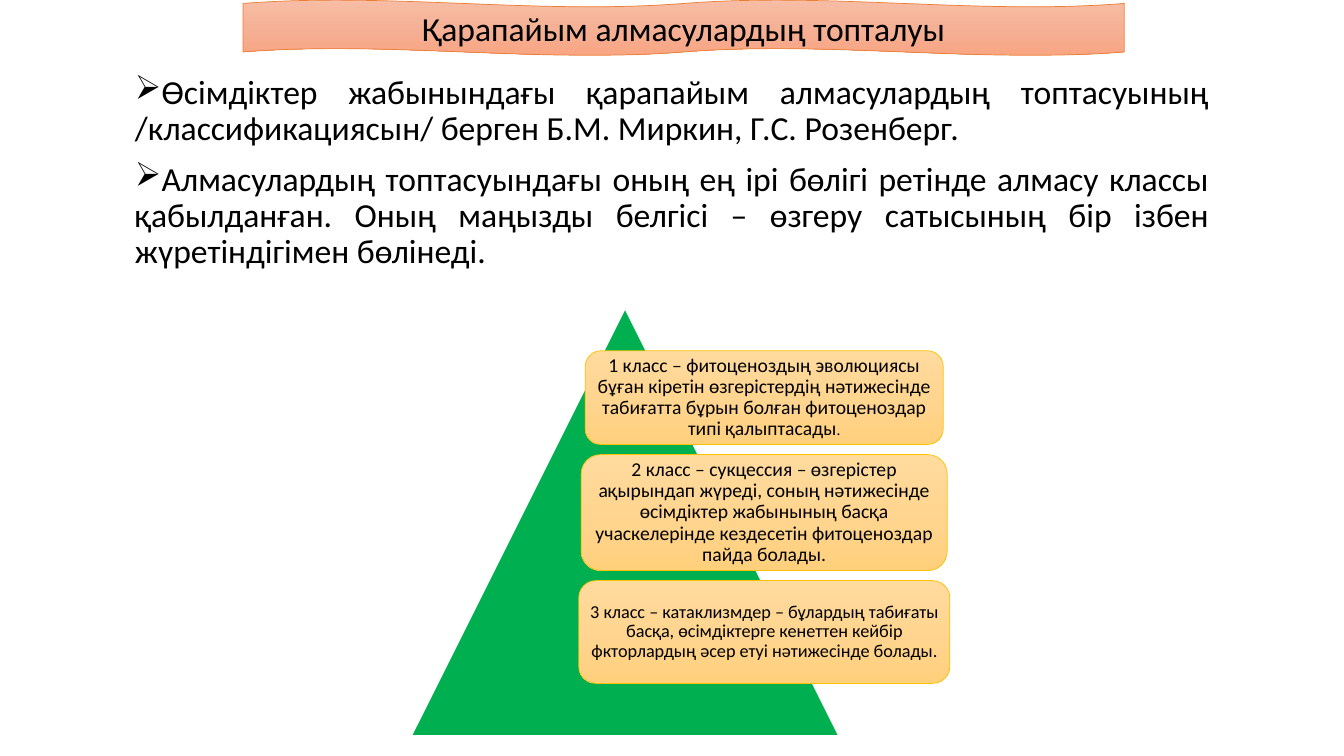
"""Builds a slide on the classes of simple vegetation changes."""
import copy

import pptx
import pptx.dml.color
import pptx.enum.shapes
import pptx.enum.text
import pptx.oxml.ns
import pptx.oxml.xmlchemy
import pptx.util
from pptx.util import Inches

RGBColor = pptx.dml.color.RGBColor
SHAPE = pptx.enum.shapes.MSO_SHAPE
ALIGN = pptx.enum.text.PP_ALIGN
ANCHOR = pptx.enum.text.MSO_ANCHOR
Pt = pptx.util.Pt

FONT = "Calibri"
BLACK = RGBColor(0x00, 0x00, 0x00)
WHITE = RGBColor(0xFF, 0xFF, 0xFF)
GREEN = RGBColor(0x00, 0xB0, 0x50)
ORANGE = RGBColor(0xED, 0x7D, 0x31)
GOLD = RGBColor(0xFF, 0xC0, 0x00)
PEACH = [RGBColor(0xF7, 0xBD, 0xA5), RGBColor(0xF5, 0xB1, 0x96), RGBColor(0xF8, 0xA5, 0x82)]
SAND = [RGBColor(0xFF, 0xDB, 0x9E), RGBColor(0xFF, 0xD5, 0x90), RGBColor(0xFF, 0xD0, 0x7C)]

TITLE = "Қарапайым алмасулардың топталуы"
INTRO = [
    "Өсімдіктер жабынындағы қарапайым алмасулардың топтасуының /классификациясын/ "
    "берген Б.М. Миркин, Г.С. Розенберг.",
    "Алмасулардың топтасуындағы оның ең ірі бөлігі ретінде алмасу классы қабылданған. "
    "Оның маңызды белгісі – өзгеру сатысының бір ізбен жүретіндігімен бөлінеді.",
]
CLASSES = [
    {"width": 3.55, "height": 0.93, "inset": 0.06, "runs": [
        ("1 класс – фитоценоздың эволюциясы бұған кіретін өзгерістердің нәтижесінде "
         "табиғатта бұрын болған фитоценоздар типі қалыптасады", 14), (".", 11)]},
    {"width": 3.63, "height": 1.15, "inset": 0.06, "runs": [
        ("2 класс – сукцессия – өзгерістер ақырындап жүреді, соның нәтижесінде өсімдіктер "
         "жабынының басқа учаскелерінде кездесетін фитоценоздар пайда болады.", 14)]},
    {"width": 3.68, "height": 1.02, "inset": 0.05, "runs": [
        ("3 класс – катаклизмдер – бұлардың табиғаты басқа, өсімдіктерге кенеттен кейбір "
         "фкторлардың әсер етуі нәтижесінде болады.", 13)]},
]
CLASS_CENTER = 7.58
CLASS_TOP = 3.48
CLASS_GAP = 0.1


def add_outlined(slide, preset, box, line_color, line_width):
    shape = slide.shapes.add_shape(preset, *map(Inches, box))
    shape.shadow.inherit = False
    shape.line.color.rgb = line_color
    shape.line.width = Pt(line_width)
    return shape


def fill_gradient(shape, colors):
    shape.fill.gradient()
    shape.fill.gradient_angle = 270
    stop_list = shape._element.spPr.find(".//" + pptx.oxml.ns.qn("a:gsLst"))
    stop_list.insert(1, copy.deepcopy(stop_list[0]))
    for stop, color, position in zip(shape.fill.gradient_stops, colors, (0, 0.5, 1)):
        stop.color.rgb = color
        stop.position = position


def write(paragraph, runs, align):
    paragraph.alignment = align
    for text, size in runs:
        run = paragraph.add_run()
        run.text = text
        run.font.name = FONT
        run.font.size = Pt(size)
        run.font.color.rgb = BLACK


def add_bullet(paragraph):
    properties = paragraph._p.get_or_add_pPr()
    properties.set("marL", "0")
    properties.set("indent", "0")
    bullet = properties.makeelement(pptx.oxml.ns.qn("a:buChar"), {"char": "➢"})
    properties.append(bullet)


def main():
    deck = pptx.Presentation()
    deck.slide_width, deck.slide_height = Inches(13.33), Inches(7.5)
    slide = deck.slides.add_slide(deck.slide_layouts[6])

    banner = add_outlined(slide, SHAPE.DOUBLE_WAVE, (2.41, 0, 8.74, 0.55), ORANGE, 0.5)
    fill_gradient(banner, PEACH)
    banner.text_frame.vertical_anchor = ANCHOR.MIDDLE
    write(banner.text_frame.paragraphs[0], [(TITLE, 24)], ALIGN.CENTER)

    intro = slide.shapes.add_textbox(*map(Inches, (1.24, 0.7, 10.85, 2.6))).text_frame
    intro.word_wrap = True
    for index, text in enumerate(INTRO):
        paragraph = intro.add_paragraph() if index else intro.paragraphs[0]
        write(paragraph, [(text, 24)], ALIGN.JUSTIFY)
        paragraph.line_spacing = 0.9
        paragraph.space_before = Pt(10)
        add_bullet(paragraph)

    pyramid = add_outlined(slide, SHAPE.ISOSCELES_TRIANGLE, (4.08, 3.06, 4.24, 4.24), WHITE, 1)
    pyramid.fill.solid()
    pyramid.fill.fore_color.rgb = GREEN

    top = CLASS_TOP
    for item in CLASSES:
        box = (CLASS_CENTER - item["width"] / 2, top, item["width"], item["height"])
        card = add_outlined(slide, SHAPE.ROUNDED_RECTANGLE, box, GOLD, 0.5)
        fill_gradient(card, SAND)
        frame = card.text_frame
        frame.word_wrap = True
        frame.vertical_anchor = ANCHOR.MIDDLE
        frame.margin_left = frame.margin_right = Inches(item["inset"])
        frame.margin_top = frame.margin_bottom = Inches(item["inset"])
        write(frame.paragraphs[0], item["runs"], ALIGN.CENTER)
        frame.paragraphs[0].line_spacing = 0.9
        top += item["height"] + CLASS_GAP

    deck.save("out.pptx")


if __name__ == "__main__":
    main()
